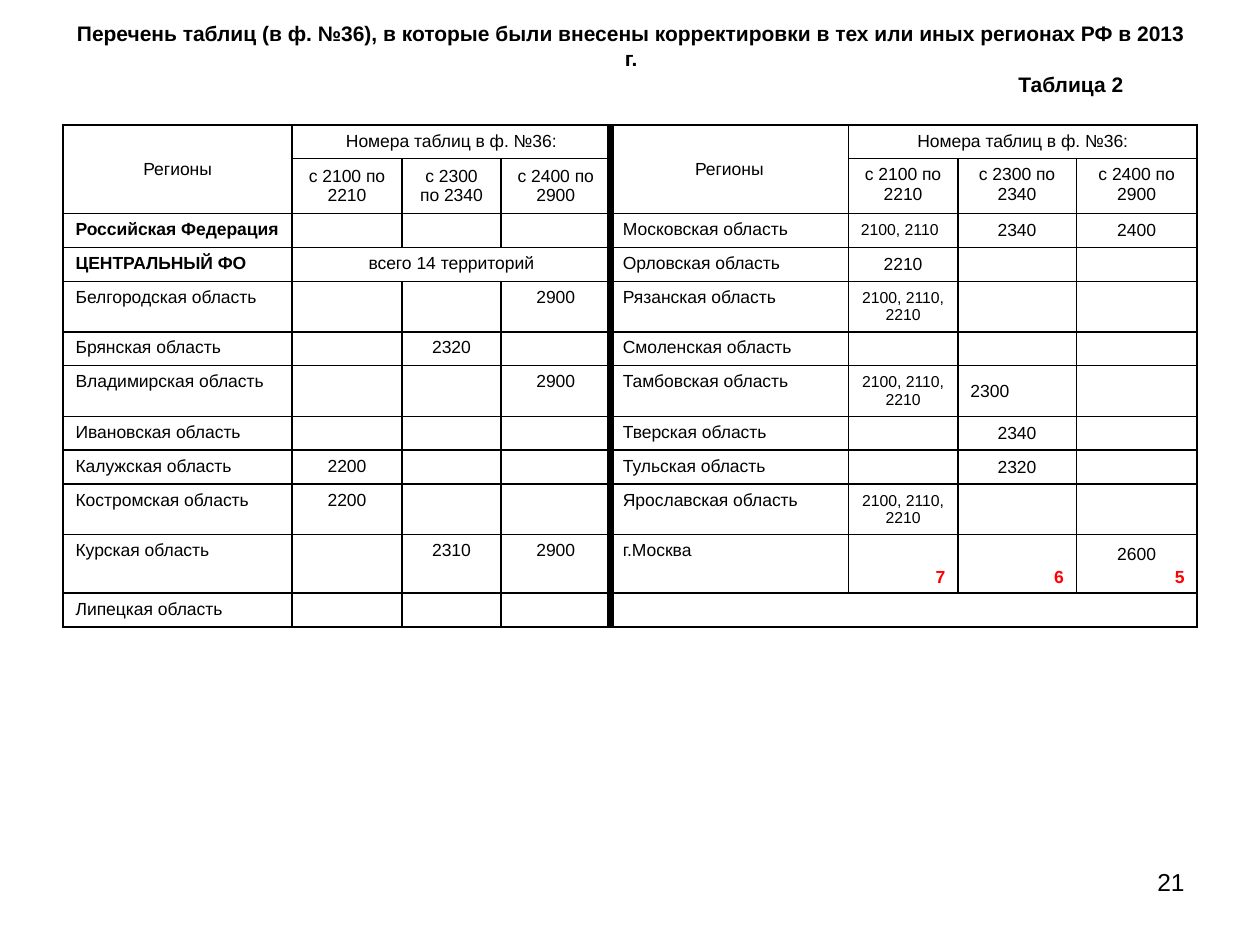
from dataclasses import dataclass

from lxml.etree import SubElement
from pptx import Presentation
from pptx.dml.color import RGBColor
from pptx.enum.text import MSO_ANCHOR as ANCHOR, MSO_AUTO_SIZE as AUTOSIZE, PP_ALIGN as ALIGN
from pptx.oxml.ns import qn
from pptx.util import Pt


@dataclass(frozen=True)
class Theme:
    font: str = "Arial"
    ink: str = "000000"
    paper: str = "FFFFFF"
    accent: str = "FF0000"
    title: float = 12
    body: float = 10
    small: float = 9
    number: float = 14
    thin: float = 1
    thick: float = 4.5


theme = Theme()


def write(frame, text, size=theme.body, bold=False, color=theme.ink,
          align=ALIGN.LEFT, before=None, append=False):
    """Write one paragraph; before is the space above in percent."""
    para = frame.add_paragraph() if append else frame.paragraphs[0]
    para.alignment = align
    if before:
        spacing = SubElement(para._p.get_or_add_pPr(), qn("a:spcBef"))
        SubElement(spacing, qn("a:spcPct"), val=str(before * 1000))
    if not text:
        # An empty cell keeps the type size, so its row stays low
        SubElement(para._p, qn("a:endParaRPr"), sz=str(int(size * 100)))
        return
    span = para.add_run()
    span.text = text
    span.font.name = theme.font
    span.font.size = Pt(size)
    span.font.bold = bold
    span.font.color.rgb = RGBColor.from_string(color)


def draw_borders(cell, widths):
    """Draw the cell borders; widths maps L, R, T, B to points."""
    properties = cell._tc.get_or_add_tcPr()
    for side, width in widths.items():
        line = SubElement(properties, qn(f"a:ln{side}"), w=str(Pt(width)))
        fill = SubElement(line, qn("a:solidFill"))
        SubElement(fill, qn("a:srgbClr"), val=theme.ink)


deck = Presentation()
deck.slide_width, deck.slide_height = Pt(720), Pt(540)
page = deck.slides.add_slide(deck.slide_layouts[5])

# Title
title = page.shapes.title
title.left, title.top, title.width, title.height = Pt(36.7), Pt(15), Pt(648), Pt(22.5)
title.text_frame.auto_size = AUTOSIZE.NONE
title.text_frame.vertical_anchor = ANCHOR.MIDDLE
write(title.text_frame,
      "Перечень таблиц (в ф. №36), в которые были внесены корректировки "
      "в тех или иных регионах РФ в 2013 г.",
      size=theme.title, bold=True, align=ALIGN.CENTER)

# Table label and page number
for text, size, bold, place in [
    ("Таблица 2", theme.title, True, (574, 37.5, 75, 21.8)),
    ("21", theme.number, False, (516, 492, 168, 37.5)),
]:
    box = page.shapes.add_textbox(*map(Pt, place))
    box.text_frame.word_wrap = True
    write(box.text_frame, text, size=size, bold=bold, align=ALIGN.RIGHT)

# Table content: region and three groups of form tables, in two halves
group = "Номера таблиц в ф. №36:"
ranges = ["с 2100 по 2210", "с 2300 по 2340", "с 2400 по 2900"]
header = ["Регионы", group, "", ""]
many = "2100, 2110, 2210"
rows = [
    header * 2,
    ["", *ranges] * 2,
    ["Российская Федерация", "", "", "", "Московская область", "2100, 2110", "2340", "2400"],
    ["ЦЕНТРАЛЬНЫЙ ФО", "всего 14 территорий", "", "", "Орловская область", "2210", "", ""],
    ["Белгородская область", "", "", "2900", "Рязанская область", many, "", ""],
    ["Брянская область", "", "2320", "", "Смоленская область", "", "", ""],
    ["Владимирская область", "", "", "2900", "Тамбовская область", many, "2300", ""],
    ["Ивановская область", "", "", "", "Тверская область", "", "2340", ""],
    ["Калужская область", "2200", "", "", "Тульская область", "", "2320", ""],
    ["Костромская область", "2200", "", "", "Ярославская область", many, "", ""],
    ["Курская область", "", "2310", "2900", "г.Москва", "", "", "2600"],
    ["Липецкая область", "", "", "", "", "", "", ""],
]
totals = {5: "7", 6: "6", 7: "5"}
bold_regions = {"Российская Федерация", "ЦЕНТРАЛЬНЫЙ ФО"}
left_aligned = {"2100, 2110", "2300"}
column_widths = [131, 62.6, 56.8, 62.4, 136, 62.6, 67.7, 69]
low, tall = 19.4, 28.8
row_heights = [low, 31, low, low, tall, low, tall, low, low, tall, 33.4, low]
total_row, header_rows, half = 10, 2, 4

# Table grid
table = page.shapes.add_table(len(rows), len(column_widths), Pt(36), Pt(71.3),
                              Pt(sum(column_widths)), Pt(sum(row_heights))).table
table.first_row = table.horz_banding = False
for column, width in zip(table.columns, column_widths):
    column.width = Pt(width)
for row, height in zip(table.rows, row_heights):
    row.height = Pt(height)
for top, left, bottom, right in [(0, 0, 1, 0), (0, 1, 0, 3), (0, 4, 1, 4),
                                 (0, 5, 0, 7), (3, 1, 3, 3), (11, 4, 11, 7)]:
    table.cell(top, left).merge(table.cell(bottom, right))

# Table cells
for r, values in enumerate(rows):
    for c, text in enumerate(values):
        cell = table.cell(r, c)
        last = c + cell.span_width - 1 if cell.is_merge_origin else c
        draw_borders(cell, {
            "L": theme.thick if c == half else theme.thin,
            "R": theme.thick if last == half - 1 else theme.thin,
            "T": theme.thin,
            "B": theme.thin,
        })
        cell.fill.solid()
        cell.fill.fore_color.rgb = RGBColor.from_string(theme.paper)

        in_header, is_region = r < header_rows, c % half == 0
        if in_header:
            middle = r == 0 or c < half
        else:
            middle = c > half
        cell.vertical_anchor = ANCHOR.MIDDLE if middle else ANCHOR.TOP
        centred = in_header or not (is_region or text in left_aligned)
        total = totals.get(c) if r == total_row else None
        if text or not total:
            write(cell.text_frame, text, before=20, bold=text in bold_regions,
                  size=theme.small if text.startswith("2100,") else theme.body,
                  align=ALIGN.CENTER if centred else ALIGN.LEFT)
        if total:
            cell.vertical_anchor = ANCHOR.BOTTOM
            write(cell.text_frame, total, before=20, bold=True, color=theme.accent,
                  align=ALIGN.RIGHT, append=bool(text))

deck.save("out.pptx")
